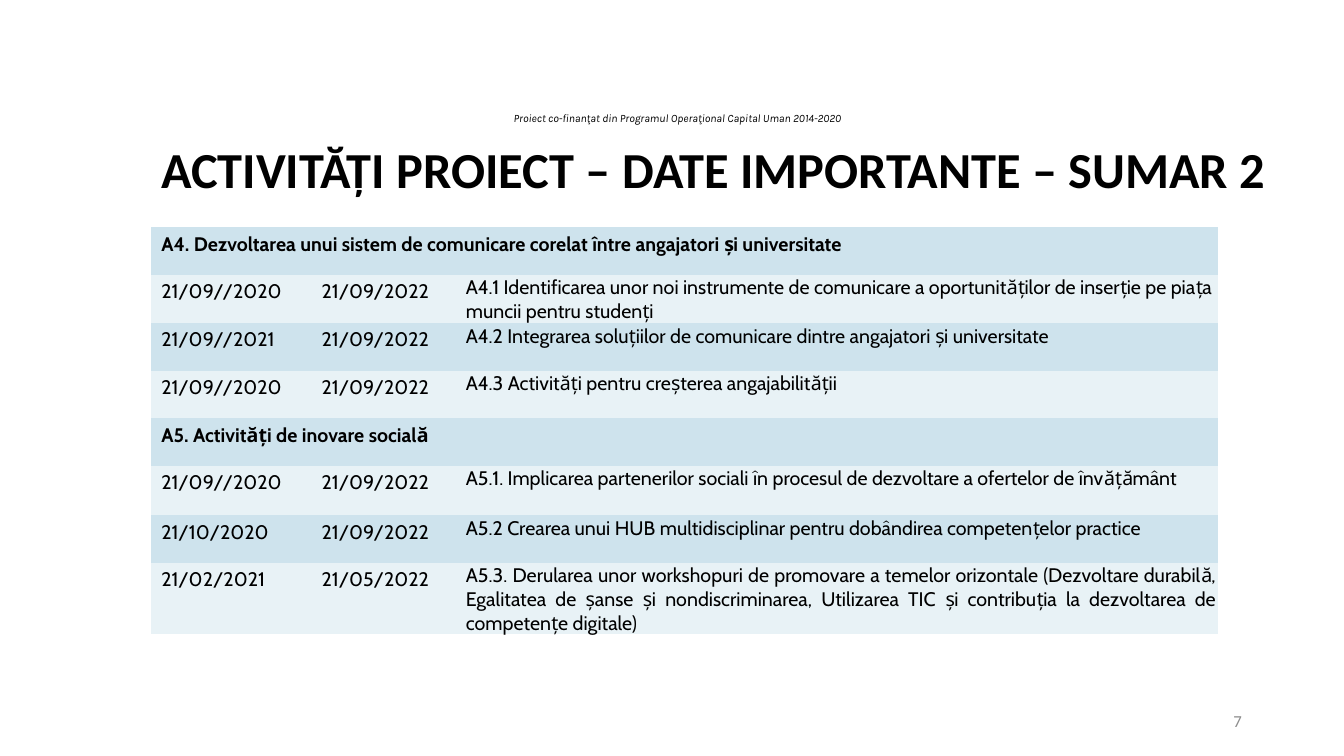
from dataclasses import dataclass

from pptx import Presentation
from pptx.dml.color import RGBColor
from pptx.enum.text import MSO_ANCHOR, PP_ALIGN as Align
from pptx.oxml.ns import qn
from pptx.util import Cm, Pt


@dataclass(frozen=True)
class Theme:
    black: str = "000000"
    grey: str = "8C8C8C"
    bands: tuple = ("CEE3ED", "E8F2F6")
    title_font: str = "Calibri"
    table_font: str = "Cabin"
    note_font: str = "Karla"
    title_size: int = 36
    table_size: int = 14
    number_size: int = 12
    note_size: int = 8


THEME = Theme()
NO_GRID_STYLE = "{2D5ABB26-0587-4C30-8999-92F81FD0307C}"
COLUMN_WIDTHS = (4.04, 3.86, 18.98)
ROW_HEIGHTS = (1.2, 1.2, 1.2, 1.2, 1.2, 1.24, 1.2, 1.52)

# A row with one entry is a heading across the whole table.
ACTIVITIES = (
    ("A4. Dezvoltarea unui sistem de comunicare corelat între angajatori și universitate",),
    ("21/09//2020", "21/09/2022",
     "A4.1 Identificarea unor noi instrumente de comunicare a oportunităților "
     "de inserție pe piața muncii pentru studenți"),
    ("21/09//2021", "21/09/2022",
     "A4.2 Integrarea soluțiilor de comunicare dintre angajatori și universitate"),
    ("21/09//2020", "21/09/2022", "A4.3 Activități pentru creșterea angajabilității"),
    ("A5. Activități de inovare socială",),
    ("21/09//2020", "21/09/2022",
     "A5.1. Implicarea partenerilor sociali în procesul de dezvoltare a ofertelor de învățământ"),
    ("21/10/2020", "21/09/2022",
     "A5.2 Crearea unui HUB multidisciplinar pentru dobândirea competențelor practice"),
    ("21/02/2021", "21/05/2022",
     "A5.3. Derularea unor workshopuri de promovare a temelor orizontale (Dezvoltare durabilă, "
     "Egalitatea de șanse și nondiscriminarea, Utilizarea TIC și contribuția la dezvoltarea "
     "de competențe digitale)"),
)


def write(frame, text, font, size, color=THEME.black, align=Align.LEFT, bold=False, italic=False):
    """Fill a text frame with one formatted paragraph and return it."""
    frame.text = text
    para = frame.paragraphs[0]
    para.alignment = align
    for span in para.runs:
        span.font.name = font
        span.font.size = Pt(size)
        span.font.bold = bold
        span.font.italic = italic
        span.font.color.rgb = RGBColor.from_string(color)
    return para


def add_text(page, left, top, width, height, text, font, size, wrap=True, **style):
    box = page.shapes.add_textbox(Cm(left), Cm(top), Cm(width), Cm(height))
    box.text_frame.word_wrap = wrap
    box.text_frame.vertical_anchor = MSO_ANCHOR.MIDDLE
    return write(box.text_frame, text, font, size, **style)


def fill_row(table, index, entries):
    is_heading = len(entries) == 1
    for cell in table.rows[index].cells:
        cell.fill.solid()
        cell.fill.fore_color.rgb = RGBColor.from_string(THEME.bands[index % 2])
    if is_heading:
        table.cell(index, 0).merge(table.cell(index, 2))
    align = Align.LEFT if index < 2 else Align.JUSTIFY
    for column, text in enumerate(entries):
        cell = table.cell(index, column)
        write(cell.text_frame, text, THEME.table_font, THEME.table_size,
              align=align, bold=is_heading)
        if column == 2:
            cell.margin_left = cell.margin_right = cell.margin_top = Cm(0.03)
            cell.margin_bottom = Cm(0)


def add_activity_table(page, left, top):
    frame = page.shapes.add_table(len(ROW_HEIGHTS), len(COLUMN_WIDTHS), Cm(left), Cm(top),
                                  Cm(sum(COLUMN_WIDTHS)), Cm(sum(ROW_HEIGHTS)))
    table = frame.table
    table.first_row = table.horz_banding = False
    table._tbl.tblPr.find(qn("a:tableStyleId")).text = NO_GRID_STYLE
    for column, width in zip(table.columns, COLUMN_WIDTHS):
        column.width = Cm(width)
    for row, height in zip(table.rows, ROW_HEIGHTS):
        row.height = Cm(height)
    for index, entries in enumerate(ACTIVITIES):
        fill_row(table, index, entries)


def main():
    deck = Presentation()
    deck.slide_width, deck.slide_height = Cm(33.87), Cm(19.05)
    page = deck.slides.add_slide(deck.slide_layouts[6])
    add_text(page, 12.22, 2.64, 9.73, 0.65,
             "Proiect co-finanţat din Programul Operaţional Capital Uman 2014-2020",
             THEME.note_font, THEME.note_size, wrap=False, align=Align.CENTER, italic=True)
    add_text(page, 23.93, 17.65, 7.62, 1.01, "7", THEME.title_font, THEME.number_size,
             color=THEME.grey, align=Align.RIGHT)
    title = add_text(page, 3.81, 2.97, 29.21, 2.74,
                     "ACTIVITĂȚI PROIECT – DATE IMPORTANTE – SUMAR 2",
                     THEME.title_font, THEME.title_size, align=Align.JUSTIFY, bold=True)
    title.line_spacing = 0.9
    add_activity_table(page, 3.81, 5.72)
    deck.save("out.pptx")


if __name__ == "__main__":
    main()
